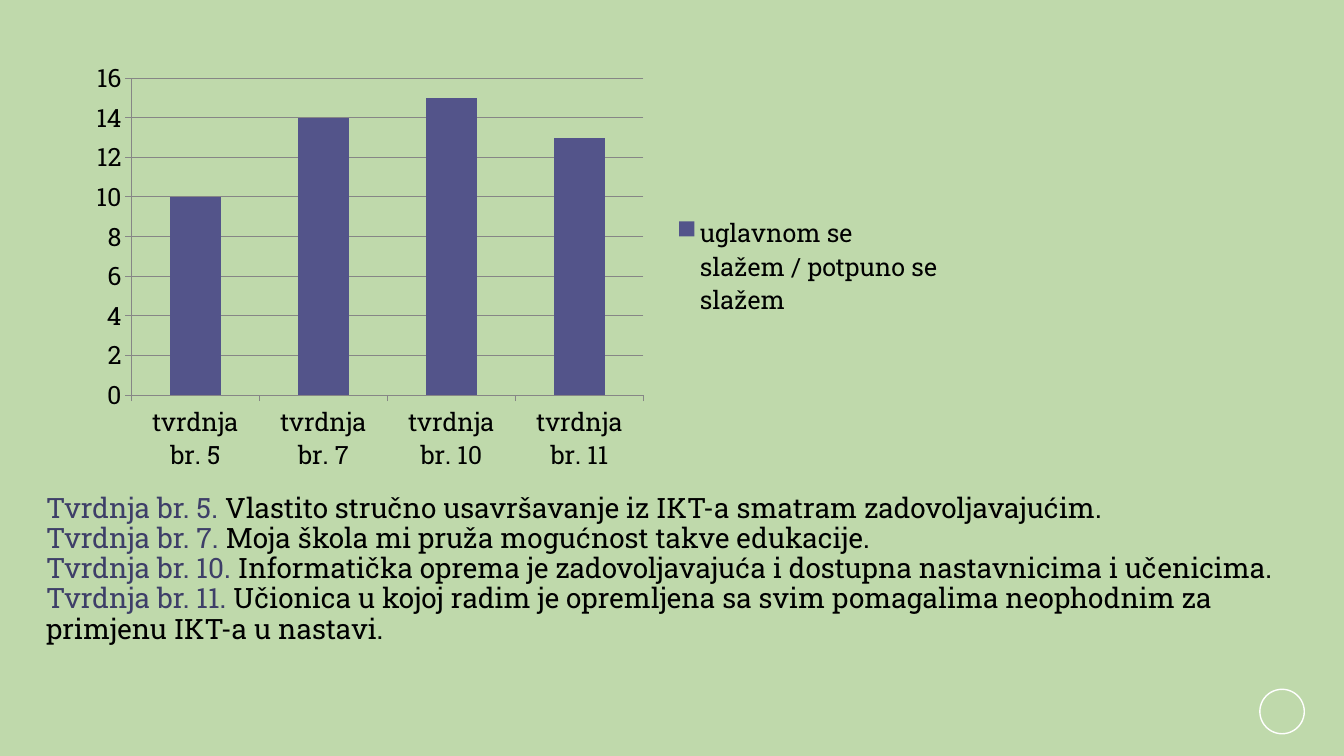
"""Build the slide with a survey column chart and the statements it refers to."""
from dataclasses import dataclass

import pptx
import pptx.chart.data
import pptx.dml.color
import pptx.enum.chart
import pptx.enum.shapes
import pptx.enum.text
import pptx.oxml
import pptx.oxml.ns
import pptx.util

Cm = pptx.util.Cm
Pt = pptx.util.Pt
FONT = "Roboto Slab"
GRID = "868686"
BLACK = "000000"


@dataclass
class Statement:
    number: int
    text: str
    agreeing: int


STATEMENTS = [
    Statement(5, "Vlastito stručno usavršavanje iz IKT-a smatram zadovoljavajućim.", 10),
    Statement(7, "Moja škola mi pruža mogućnost takve edukacije.", 14),
    Statement(10, "Informatička oprema je zadovoljavajuća i dostupna nastavnicima i učenicima.", 15),
    Statement(11, "Učionica u kojoj radim je opremljena sa svim pomagalima neophodnim za "
                  "primjenu IKT-a u nastavi.", 13),
]


def rgb(value: str) -> pptx.dml.color.RGBColor:
    return pptx.dml.color.RGBColor.from_string(value)


def set_font(font, size: float, color: str) -> None:
    font.name = FONT
    font.size = Pt(size)
    font.color.rgb = rgb(color)


def set_line(line, color: str, width: float) -> None:
    line.color.rgb = rgb(color)
    line.width = Pt(width)


def make_layout(x: float, y: float, w: float, h: float, inner: bool = False):
    target = '<c:layoutTarget val="inner"/>' if inner else ""
    return pptx.oxml.parse_xml(
        f'<c:layout {pptx.oxml.ns.nsdecls("c")}><c:manualLayout>{target}'
        '<c:xMode val="edge"/><c:yMode val="edge"/>'
        f'<c:x val="{x}"/><c:y val="{y}"/><c:w val="{w}"/><c:h val="{h}"/>'
        '</c:manualLayout></c:layout>')


def add_ring(s) -> None:
    sp = s.shapes.add_shape(pptx.enum.shapes.MSO_SHAPE.OVAL,
                            Cm(31.75), Cm(17.37), Cm(1.12), Cm(1.12))
    sp.shadow.inherit = False
    sp.fill.background()
    set_line(sp.line, "FFFFFF", 1)


def add_agreement_chart(s) -> None:
    data = pptx.chart.data.CategoryChartData(number_format="0")
    data.categories = [f"tvrdnja br. {st.number}" for st in STATEMENTS]
    data.add_series("uglavnom se slažem / potpuno se slažem",
                    [st.agreeing for st in STATEMENTS])
    chart = s.shapes.add_chart(pptx.enum.chart.XL_CHART_TYPE.COLUMN_CLUSTERED,
                               Cm(2), Cm(1.32), Cm(21.87), Cm(10.8), data).chart
    set_font(chart.font, 18, BLACK)
    chart.has_title = False

    plot = chart.plots[0]
    plot.gap_width = 150
    plot.vary_by_categories = False
    fill = plot.series[0].format.fill
    fill.solid()
    fill.fore_color.rgb = rgb("53548A")

    for axis in (chart.category_axis, chart.value_axis):
        axis.major_tick_mark = pptx.enum.chart.XL_TICK_MARK.OUTSIDE
        axis.minor_tick_mark = pptx.enum.chart.XL_TICK_MARK.NONE
        set_line(axis.format.line, GRID, 0.75)
    values = chart.value_axis
    values.minimum_scale, values.maximum_scale, values.major_unit = 0, 16, 2
    values.has_major_gridlines = True
    set_line(values.major_gridlines.format.line, GRID, 0.75)
    values.tick_labels.number_format = "0"
    values.tick_labels.number_format_is_linked = False

    chart.has_legend = True
    legend = chart.legend
    legend.position = pptx.enum.chart.XL_LEGEND_POSITION.RIGHT
    legend.include_in_layout = False
    set_font(legend.font, 18, BLACK)

    tag = pptx.oxml.ns.qn
    root = chart.element
    area = root.find(f".//{tag('c:plotArea')}")
    key = root.find(f".//{tag('c:legend')}")
    for parent in (area, key):
        for old in parent.findall(tag("c:layout")):
            parent.remove(old)
    area.insert(0, make_layout(0.06, 0.06, 0.59, 0.74, inner=True))
    key.insert(1, make_layout(0.68, 0.37, 0.32, 0.26))


def add_run(p, text: str, color: str) -> None:
    r = p.add_run()
    r.text = text
    set_font(r.font, 20, color)


def fill_statements(body) -> None:
    body.left, body.top = Cm(0.91), Cm(12.32)
    body.width, body.height = Cm(31.72), Cm(5.38)
    tf = body.text_frame
    tf.word_wrap = True
    tf.auto_size = pptx.enum.text.MSO_AUTO_SIZE.NONE
    tf.vertical_anchor = pptx.enum.text.MSO_ANCHOR.TOP
    for i, st in enumerate(STATEMENTS):
        p = tf.add_paragraph() if i else tf.paragraphs[0]
        pPr = p._p.get_or_add_pPr()
        pPr.set("marL", "0")
        pPr.set("indent", "0")
        pPr.append(pptx.oxml.parse_xml(f'<a:buNone {pptx.oxml.ns.nsdecls("a")}/>'))
        p.space_before = p.space_after = Pt(0)
        p.line_spacing = 0.9
        add_run(p, f"Tvrdnja br. {st.number}. ", "3E3F68")
        add_run(p, st.text, BLACK)


def main() -> None:
    prs = pptx.Presentation()
    prs.slide_width, prs.slide_height = Cm(33.87), Cm(19.05)
    s = prs.slides.add_slide(prs.slide_layouts[1])
    s.background.fill.solid()
    s.background.fill.fore_color.rgb = rgb("BFD9AB")
    title = s.shapes.title.element
    title.getparent().remove(title)
    add_ring(s)
    add_agreement_chart(s)
    fill_statements(s.placeholders[1])
    prs.save("out.pptx")


if __name__ == "__main__":
    main()
